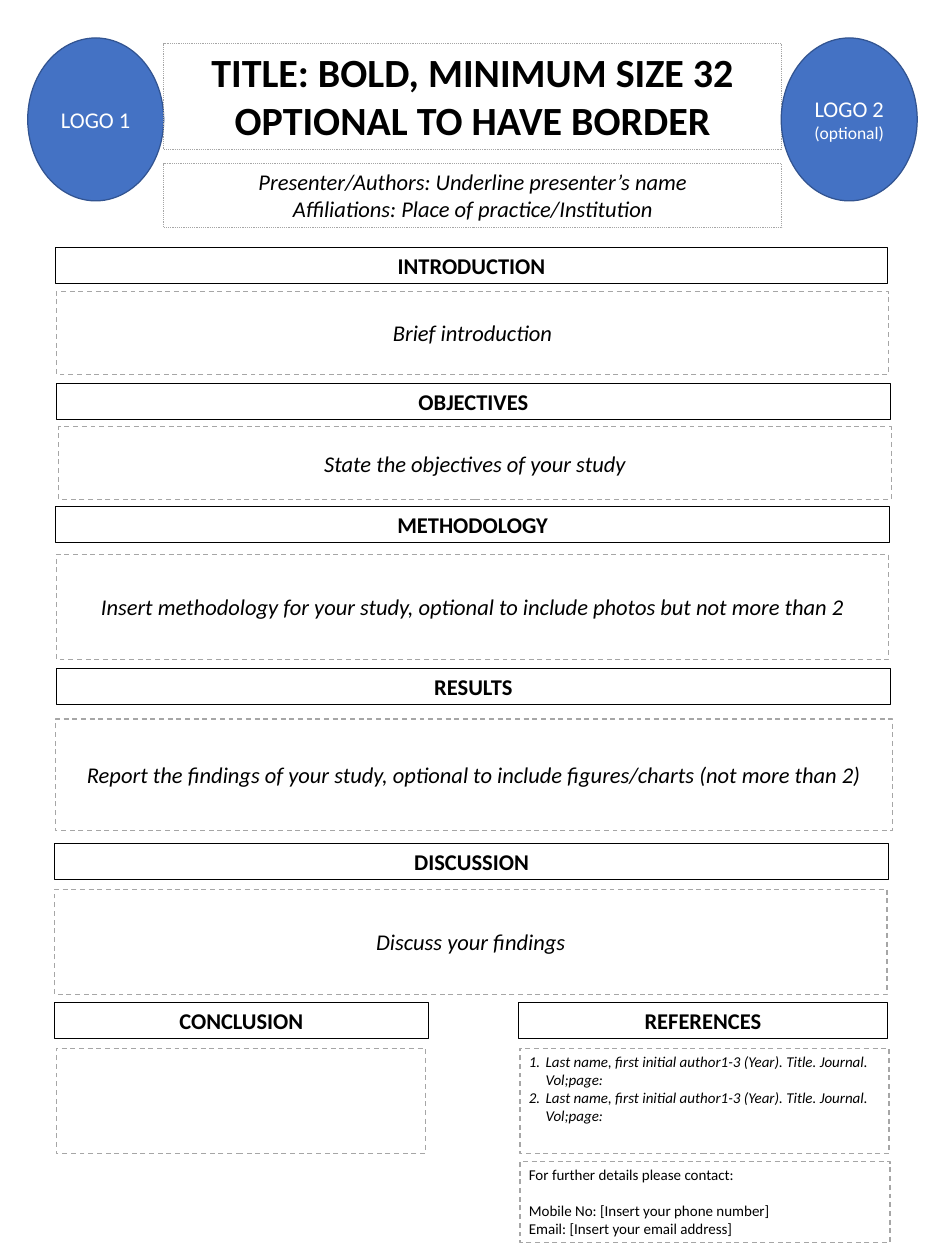
from lxml import etree
from pptx import Presentation
from pptx.dml.color import RGBColor
from pptx.enum.dml import MSO_LINE
from pptx.enum.shapes import MSO_SHAPE
from pptx.enum.text import MSO_ANCHOR, MSO_AUTO_SIZE, PP_ALIGN
from pptx.oxml.ns import qn
from pptx.util import Pt

OVAL, RECT = MSO_SHAPE.OVAL, MSO_SHAPE.RECTANGLE
DASH, DOT = MSO_LINE.DASH, MSO_LINE.ROUND_DOT
TOP, MIDDLE = MSO_ANCHOR.TOP, MSO_ANCHOR.MIDDLE
LEFT, CENTER = PP_ALIGN.LEFT, PP_ALIGN.CENTER
FIT = MSO_AUTO_SIZE.SHAPE_TO_FIT_TEXT

FONT = "Calibri"
COLORS = {"black": "000000", "white": "FFFFFF", "grey": "A6A6A6",
          "blue": "4472C4", "navy": "325491"}

# Heading, its box, prompt, box of the prompt: (left, top, width, height)
HEADING_HEIGHT = 28.8
SECTIONS = [
    ("INTRODUCTION", (44.2, 198, 666), "Brief introduction", (45, 233.4, 666, 66)),
    ("OBJECTIVES", (45, 307, 667.4), "State the objectives of your study",
     (47, 341.3, 666, 58.3)),
    ("METHODOLOGY", (44.4, 405.2, 667.4),
     "Insert methodology for your study, optional to include photos but not more than 2",
     (45, 443.5, 666, 84.2)),
    ("RESULTS", (45, 534.8, 667.4),
     "Report the findings of your study, optional to include figures/charts (not more than 2)",
     (44.4, 575.3, 669.6, 89.3)),
    ("DISCUSSION", (43.6, 674.6, 667.4), "Discuss your findings",
     (43.6, 711.4, 666, 84.2)),
    ("CONCLUSION", (43.6, 802, 299), "", (45, 838.6, 295.2, 84.2)),
]
CITATION = "Last name, first initial author1-3 (Year). Title. Journal. Vol;page:"


def rgb(name):
    return RGBColor.from_string(COLORS[name])


def add_frame(slide, box, line, weight, dash=None, fill=None, preset=RECT):
    frame = slide.shapes.add_shape(preset, *(Pt(v) for v in box))
    frame.shadow.inherit = False
    if fill:
        frame.fill.solid()
        frame.fill.fore_color.rgb = rgb(fill)
    else:
        frame.fill.background()
    frame.line.color.rgb = rgb(line)
    frame.line.width = Pt(weight)
    if dash:
        frame.line.dash_style = dash
    return frame


def write(frame, lines, size, color="black", bold=False, italic=False,
          align=CENTER, anchor=TOP):
    text = frame.text_frame
    text.word_wrap = True
    text.vertical_anchor = anchor
    for index, line in enumerate(lines):
        paragraph = text.add_paragraph() if index else text.paragraphs[0]
        paragraph.add_run().text = line
        paragraph.alignment = align
        font = paragraph.font
        font.name, font.size, font.bold, font.italic = FONT, Pt(size), bold, italic
        font.color.rgb = rgb(color)
    return text


def add_logo(slide, left, label, note=""):
    logo = add_frame(slide, (left, 30.4, 108.8, 130.3), "navy", 1,
                     fill="blue", preset=OVAL)
    paragraph = write(logo, [label], 18, "white", anchor=MIDDLE).paragraphs[0]
    if note:
        optional = paragraph.add_run()
        optional.text = note
        optional.font.size = Pt(14)


def add_banner(slide, top, height, lines, size, **style):
    banner = add_frame(slide, (131, top, 494.6, height), "grey", 0.75, DOT)
    write(banner, lines, size, **style).auto_size = FIT


def add_heading(slide, box, title):
    heading = add_frame(slide, (*box, HEADING_HEIGHT), "black", 0.75)
    write(heading, [title], 18, bold=True).auto_size = FIT


def add_body(slide, box, lines, size=18, **style):
    body = add_frame(slide, box, "grey", 1, DASH)
    return write(body, lines, size, **style)


def number(paragraph):
    properties = paragraph._p.get_or_add_pPr()
    properties.set("marL", str(Pt(13.5)))
    properties.set("indent", str(-Pt(13.5)))
    bullet = etree.Element(qn("a:buAutoNum"), type="arabicPeriod")
    properties.insert_element_before(bullet, "a:tabLst", "a:defRPr", "a:extLst")


def main():
    deck = Presentation()
    deck.slide_width, deck.slide_height = Pt(756), Pt(1008)
    slide = deck.slides.add_slide(deck.slide_layouts[6])

    # Header
    add_logo(slide, 22.2, "LOGO 1")
    add_banner(slide, 34.8, 85,
               ["TITLE: BOLD, MINIMUM SIZE 32", "OPTIONAL TO HAVE BORDER"], 32, bold=True)
    add_banner(slide, 131, 51,
               ["Presenter/Authors: Underline presenter’s name",
                "Affiliations: Place of practice/Institution"], 18, italic=True)
    add_logo(slide, 625, "LOGO 2 ", "(optional)")

    # Sections
    for title, heading_box, prompt, body_box in SECTIONS:
        add_heading(slide, heading_box, title)
        add_body(slide, body_box, [prompt] if prompt else [], italic=True, anchor=MIDDLE)

    # References
    add_heading(slide, (414.8, 802, 295.2), "REFERENCES")
    references = add_body(slide, (416, 838.6, 295.2, 84.2), [CITATION] * 2, 12,
                          italic=True, align=LEFT)
    for citation in references.paragraphs:
        number(citation)

    # Contact
    contact = add_body(slide, (416, 929, 296, 65),
                       ["For further details please contact:",
                        "Mobile No: [Insert your phone number]",
                        "Email: [Insert your email address]"], 12, align=LEFT)
    contact.paragraphs[0].space_after = Pt(14.6)

    deck.save("out.pptx")


if __name__ == "__main__":
    main()
